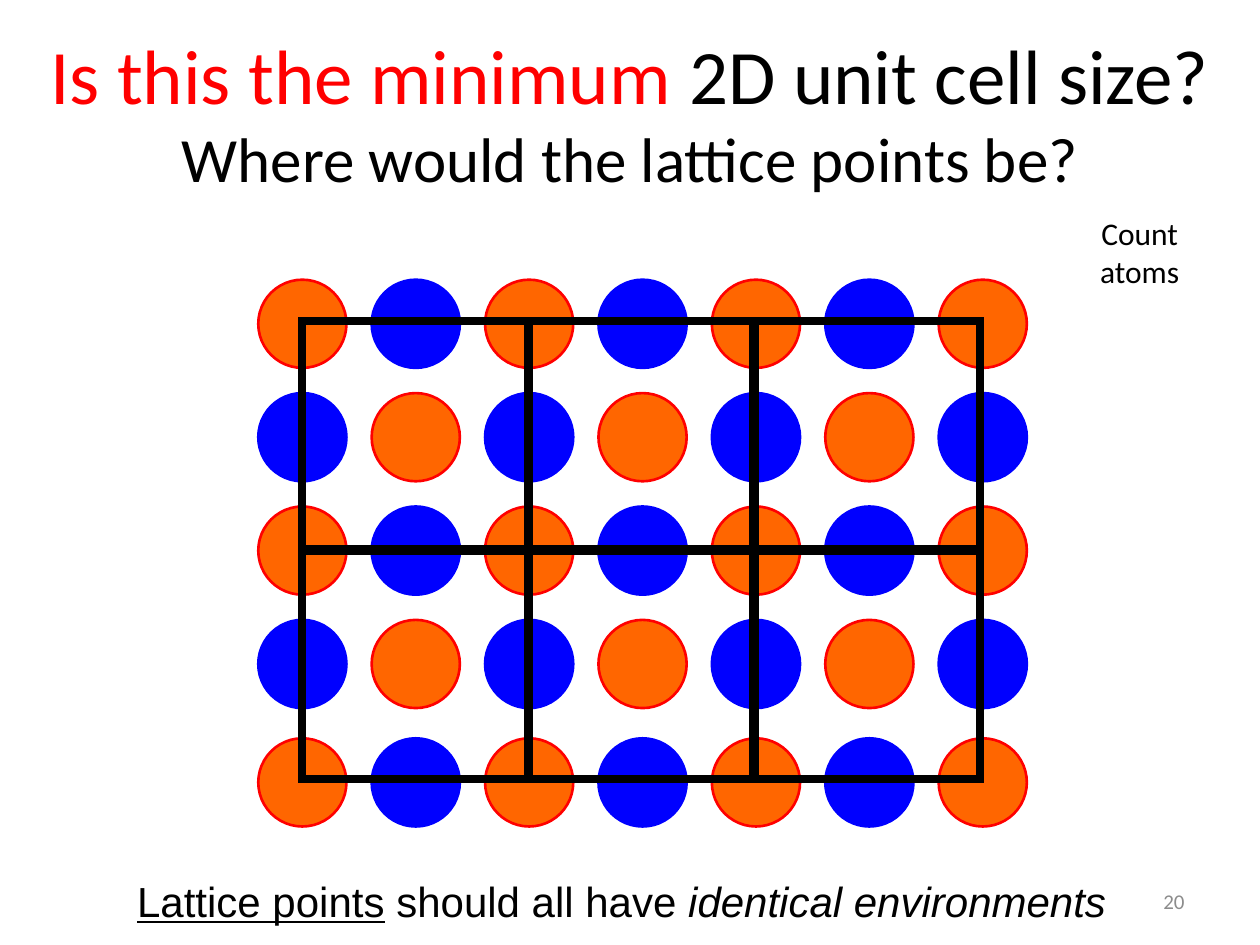
from dataclasses import dataclass

from lxml import etree
from pptx import Presentation
from pptx.dml.color import RGBColor
from pptx.enum.shapes import MSO_SHAPE
from pptx.enum.text import MSO_ANCHOR, PP_ALIGN
from pptx.oxml.ns import qn
from pptx.util import Inches, Pt

OVAL, RECTANGLE = MSO_SHAPE.OVAL, MSO_SHAPE.RECTANGLE
LEFT, CENTER, RIGHT = PP_ALIGN.LEFT, PP_ALIGN.CENTER, PP_ALIGN.RIGHT
TOP, MIDDLE = MSO_ANCHOR.TOP, MSO_ANCHOR.MIDDLE

RED = RGBColor(0xFF, 0x00, 0x00)
ORANGE = RGBColor(0xFF, 0x66, 0x00)
BLUE = RGBColor(0x00, 0x00, 0xFF)
BLACK = RGBColor(0x00, 0x00, 0x00)
GRAY = RGBColor(0x8C, 0x8C, 0x8C)

# Lattice geometry, in inches
ATOM_COLUMNS = 7
ATOM_SIZE = 0.7
ATOM_PITCH = 0.9
ATOM_LEFT = 2.05
ATOM_ROW_TOPS = (2.22, 3.12, 4.02, 4.92, 5.86)
CELL_COLUMNS = 3
CELL_LEFT, CELL_PITCH = 2.4, 1.79
CELL_WIDTH, CELL_HEIGHT = 1.8, 1.81
CELL_ROW_TOPS = (4.37, 2.55)


@dataclass(frozen=True)
class TextRun:
    text: str
    size: float
    color: RGBColor = BLACK
    font: str = "Calibri"
    underline: bool = False
    italic: bool = False


@dataclass(frozen=True)
class TextBlock:
    left: float
    top: float
    width: float
    height: float
    lines: tuple[tuple[TextRun, ...], ...]
    align: PP_ALIGN = CENTER
    anchor: MSO_ANCHOR = TOP


@dataclass(frozen=True)
class AtomStyle:
    fill: RGBColor
    line: RGBColor


ATOM_STYLES = (AtomStyle(ORANGE, RED), AtomStyle(BLUE, BLUE))

TEXT_BLOCKS = (
    # Slide number
    TextBlock(7.17, 6.95, 2.33, 0.4, ((TextRun("20", 12, GRAY),),), RIGHT, MIDDLE),
    # Title
    TextBlock(0, 0.11, 10, 1.55, (
        (TextRun("Is this the minimum ", 44, RED), TextRun("2D unit cell size?", 44)),
        (TextRun("Where would the lattice points be?", 36),),
    ), CENTER, MIDDLE),
    # Rule below the lattice
    TextBlock(0.99, 6.9, 8.51, 0.5, ((
        TextRun("Lattice points", 24, font="Arial", underline=True),
        TextRun(" should all have ", 24, font="Arial"),
        TextRun("identical environments", 24, font="Arial", italic=True),
    ),), LEFT),
    # Side note
    TextBlock(8.42, 1.65, 1.25, 0.71, ((TextRun("Count atoms", 18),),)),
)


def add_text(slide, block: TextBlock) -> None:
    shape = slide.shapes.add_textbox(
        Inches(block.left), Inches(block.top), Inches(block.width), Inches(block.height))
    text_frame = shape.text_frame
    text_frame.word_wrap = True
    text_frame.vertical_anchor = block.anchor
    paragraph = text_frame.paragraphs[0]
    paragraph.alignment = block.align
    for index, line in enumerate(block.lines):
        if index:
            paragraph.add_line_break()
        for item in line:
            run = paragraph.add_run()
            run.text = item.text
            run.font.name = item.font
            run.font.size = Pt(item.size)
            run.font.color.rgb = item.color
            run.font.underline = item.underline
            run.font.italic = item.italic


def add_atom(slide, left: float, top: float, style: AtomStyle) -> None:
    shape = slide.shapes.add_shape(
        OVAL, Inches(left), Inches(top), Inches(ATOM_SIZE), Inches(ATOM_SIZE))
    shape.shadow.inherit = False
    shape.fill.solid()
    shape.fill.fore_color.rgb = style.fill
    shape.line.color.rgb = style.line
    shape.line.width = Pt(1.5)


def add_unit_cell(slide, left: float, top: float) -> None:
    shape = slide.shapes.add_shape(
        RECTANGLE, Inches(left), Inches(top), Inches(CELL_WIDTH), Inches(CELL_HEIGHT))
    shape.shadow.inherit = False
    shape.fill.background()
    shape.line.color.rgb = BLACK
    shape.line.width = Pt(4.5)
    # Square corners
    line = shape.element.spPr.find(qn("a:ln"))
    etree.SubElement(line, qn("a:miter")).set("lim", "800000")


def main() -> None:
    presentation = Presentation()
    presentation.slide_width = Inches(10)
    presentation.slide_height = Inches(7.5)
    slide = presentation.slides.add_slide(presentation.slide_layouts[6])

    # Atoms alternate like a checkerboard
    for row, top in enumerate(ATOM_ROW_TOPS):
        for column in range(ATOM_COLUMNS):
            style = ATOM_STYLES[(row + column) % 2]
            add_atom(slide, ATOM_LEFT + column * ATOM_PITCH, top, style)

    # Unit cells
    for top in CELL_ROW_TOPS:
        for column in range(CELL_COLUMNS):
            add_unit_cell(slide, CELL_LEFT + column * CELL_PITCH, top)

    # Texts
    for block in TEXT_BLOCKS:
        add_text(slide, block)

    presentation.save("out.pptx")


if __name__ == "__main__":
    main()
